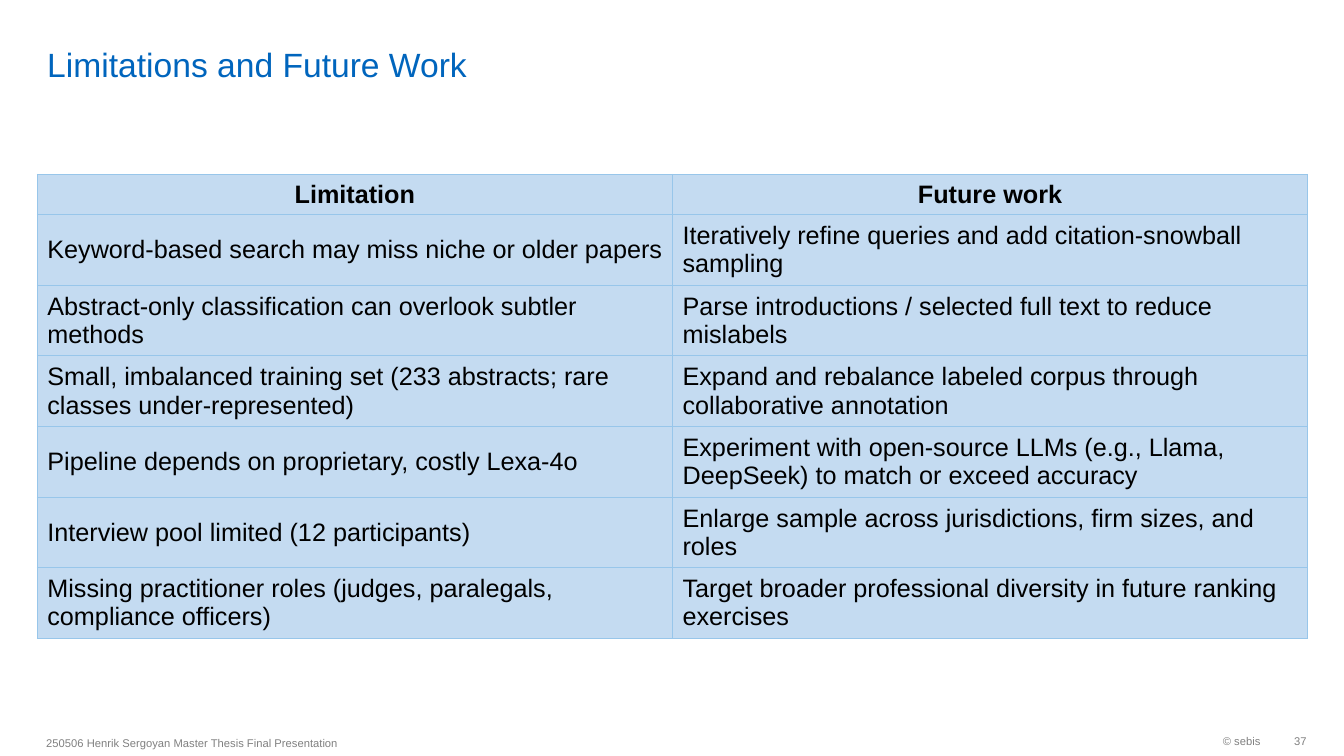
import pptx
import pptx.dml.color
import pptx.enum.text
import pptx.oxml
import pptx.oxml.ns
import pptx.util
from pptx.util import Inches

ALIGN = pptx.enum.text.PP_ALIGN
ANCHOR = pptx.enum.text.MSO_ANCHOR
FONT = "Arial"
BLUE, GRAY, BLACK = "0065BD", "808080", "000000"
CELL_FILL, CELL_BORDER = "C4DBF1", "98C6EA"

TEXTS = [
    ("Limitations and Future Work", (0.37, 0.05, 11.58, 0.79),
     24, BLUE, ALIGN.LEFT, ANCHOR.BOTTOM, (0.1, 0, 0.1, 0)),
    ("© sebis", (10.26, 7.19, 2.34, 0.32),
     8, GRAY, ALIGN.RIGHT, ANCHOR.MIDDLE, (0.1, 0.05, 0.1, 0.05)),
    ("37", (12.6, 7.19, 0.36, 0.32),
     8, GRAY, ALIGN.RIGHT, ANCHOR.MIDDLE, (0.1, 0.05, 0, 0.05)),
    ("250506 Henrik Sergoyan Master Thesis Final Presentation", (0.36, 7.21, 6.3, 0.32),
     8, GRAY, ALIGN.LEFT, ANCHOR.MIDDLE, (0.1, 0.05, 0.1, 0.05)),
]

ROWS = [
    ("Limitation", "Future work"),
    ("Keyword-based search may miss niche or older papers",
     "Iteratively refine queries and add citation-snowball sampling"),
    ("Abstract-only classification can overlook subtler methods",
     "Parse introductions / selected full text to reduce mislabels"),
    ("Small, imbalanced training set (233 abstracts; rare classes under-represented)",
     "Expand and rebalance labeled corpus through collaborative annotation"),
    ("Pipeline depends on proprietary, costly Lexa-4o",
     "Experiment with open-source LLMs (e.g., Llama, DeepSeek) to match or exceed accuracy"),
    ("Interview pool limited (12 participants)",
     "Enlarge sample across jurisdictions, firm sizes, and roles"),
    ("Missing practitioner roles (judges, paralegals, compliance officers)",
     "Target broader professional diversity in future ranking exercises"),
]
TABLE_LEFT, TABLE_TOP, COLUMN_WIDTH = 0.37, 1.73, 6.3
HEADER_HEIGHT, ROW_HEIGHT = 0.4, 0.7


def color(value):
    return pptx.dml.color.RGBColor.from_string(value)


def write(paragraph, text, size, value, align, bold=False):
    paragraph.alignment = align
    run = paragraph.add_run()
    run.text = text
    run.font.name = FONT
    run.font.size = pptx.util.Pt(size)
    run.font.bold = bold
    run.font.color.rgb = color(value)


def add_text(slide, text, box, size, value, align, anchor, insets):
    frame = slide.shapes.add_textbox(*map(Inches, box)).text_frame
    frame.word_wrap = True
    frame.vertical_anchor = anchor
    (frame.margin_left, frame.margin_top,
     frame.margin_right, frame.margin_bottom) = map(Inches, insets)
    write(frame.paragraphs[0], text, size, value, align)


def add_borders(cell):
    properties = cell._tc.get_or_add_tcPr()
    for side in ("lnL", "lnR", "lnT", "lnB"):
        properties.append(pptx.oxml.parse_xml(
            f'<a:{side} {pptx.oxml.ns.nsdecls("a")} w="{pptx.util.Pt(0.75)}">'
            f'<a:solidFill><a:srgbClr val="{CELL_BORDER}"/></a:solidFill></a:{side}>'))


def add_limitations_table(slide):
    heights = [HEADER_HEIGHT] + [ROW_HEIGHT] * (len(ROWS) - 1)
    columns = len(ROWS[0])
    table = slide.shapes.add_table(
        len(ROWS), columns, Inches(TABLE_LEFT), Inches(TABLE_TOP),
        Inches(COLUMN_WIDTH * columns), Inches(sum(heights))).table
    table.first_row = table.horz_banding = False
    for column in table.columns:
        column.width = Inches(COLUMN_WIDTH)
    for index, (row, height, texts) in enumerate(zip(table.rows, heights, ROWS)):
        row.height = Inches(height)
        header = index == 0
        for cell, text in zip(row.cells, texts):
            add_borders(cell)
            cell.fill.solid()
            cell.fill.fore_color.rgb = color(CELL_FILL)
            cell.vertical_anchor = ANCHOR.MIDDLE
            write(cell.text_frame.paragraphs[0], text, 18, BLACK,
                  ALIGN.CENTER if header else ALIGN.LEFT, header)


def main():
    presentation = pptx.Presentation()
    presentation.slide_width = Inches(13.33)
    presentation.slide_height = Inches(7.5)
    slide = presentation.slides.add_slide(presentation.slide_layouts[6])
    for item in TEXTS:
        add_text(slide, *item)
    add_limitations_table(slide)
    presentation.save("out.pptx")


if __name__ == "__main__":
    main()
